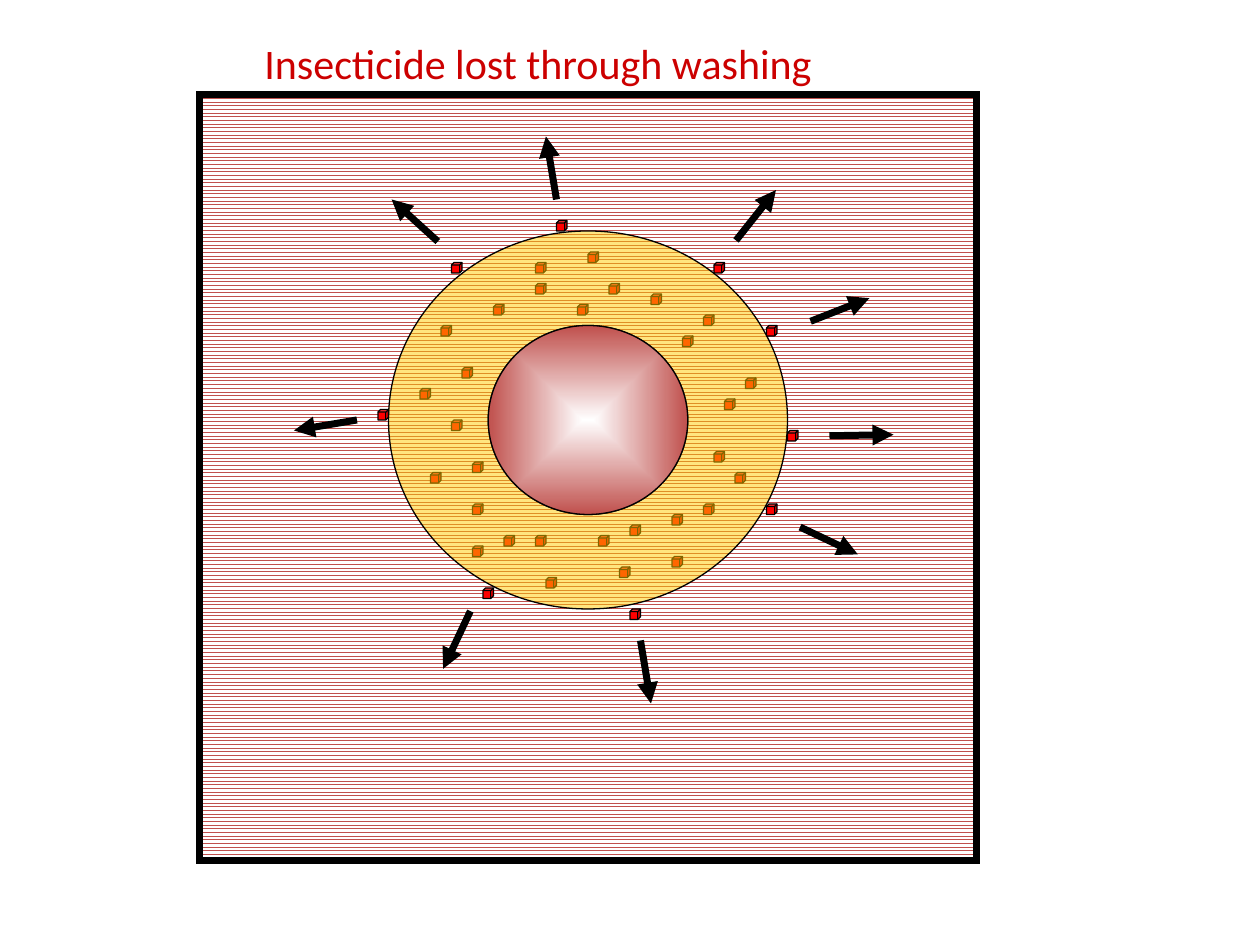
import lxml.etree
import pptx
import pptx.dml.color
import pptx.enum.dml
import pptx.enum.shapes
import pptx.oxml.ns
import pptx.util

KIND = pptx.enum.shapes.MSO_SHAPE
qn = pptx.oxml.ns.qn
add = lxml.etree.SubElement
HEX = {"ink": "000000", "red": "FF0000", "brick": "C0504D",
       "gold": "FFCC00", "title": "CC0000", "white": "FFFFFF"}
RGB = {name: pptx.dml.color.RGBColor.from_string(code) for name, code in HEX.items()}


def cell(*nums):
    """Turn grid cells of a twelfth of an inch into lengths."""
    return [pptx.util.Emu(round(num * 76200)) for num in nums]


def trim(shape, fill=None, width=0.75):
    """Set a shape's solid fill and black outline, without shadow."""
    shape.shadow.inherit = False
    if fill:
        shape.fill.solid()
        shape.fill.fore_color.rgb = RGB[fill]
    else:
        shape.fill.background()
    shape.line.color.rgb = RGB["ink"]
    shape.line.width = pptx.util.Pt(width)


deck = pptx.Presentation()
deck.slide_width, deck.slide_height = cell(120, 90)
slide = deck.slides.add_slide(deck.slide_layouts[6])
shapes = slide.shapes

# Water behind the fibre, then its frame with sharp corners
area = cell(19, 9, 74, 73)
water = shapes.add_shape(KIND.RECTANGLE, *area)
water.shadow.inherit = False
water.fill.patterned()
water.fill.pattern = pptx.enum.dml.MSO_PATTERN.ZIG_ZAG
water.fill.fore_color.rgb = RGB["brick"]
water.fill.back_color.rgb = RGB["white"]
water.line.fill.background()
border = shapes.add_shape(KIND.RECTANGLE, *area)
trim(border, width=4)
add(border._element.spPr.find(qn("a:ln")), qn("a:miter"), lim="800000")

# Insecticide grains: held in the coat, and lost at its surface
held = [(68, 43), (65, 32), (71, 36), (64, 49), (62, 28), (44, 35), (67, 30), (59, 54),
        (51, 51), (45, 48), (47, 29), (58, 27), (52, 55), (60, 50), (43, 40), (51, 27),
        (41, 45), (42, 31), (67, 48), (64, 53), (45, 52), (56, 24), (69, 38), (70, 45),
        (57, 51), (40, 37), (51, 25), (55, 29), (45, 44), (48, 51)]
lost = [(73, 48), (75, 41), (68, 25), (73, 31), (60, 58), (53, 21), (46, 56), (36, 39),
        (43, 25)]
fibre = shapes.add_group_shape().shapes
loose = shapes.add_group_shape().shapes
for group, spots in ((fibre, held), (loose, lost)):
    for x, y in spots:
        trim(group.add_shape(KIND.CUBE, *cell(x, y, 1, 1)), "red")

# Coat: a ring whose hole is half its size and runs the other way round
mid_x, mid_y, wide, high = 56, 40, 19, 18
loops = []
for share, turn in ((1, -1), (0.5, 1)):
    dx, dy = share * wide, share * high * turn
    loops.append([cell(mid_x + sx * dx, mid_y + sy * dy)
                  for sx, sy in ((-1, 0), (0, 1), (1, 0), (0, -1), (-1, 0))])
outer, inner = loops
pen = fibre.build_freeform(*outer[0])
pen.add_line_segments(outer[1:], close=True)
pen.move_to(*inner[0])
pen.add_line_segments(inner[1:], close=True)
coat = pen.convert_to_shape()
trim(coat, "gold")
tint = coat._element.spPr.find(qn("a:solidFill"))[0]
add(tint, qn("a:alpha"), val="50000")

# Bend each side of the two loops into a quarter of an ellipse
bend = 0.5523
hub = cell(wide, high)
for step in list(coat._element.iter(qn("a:moveTo"), qn("a:lnTo"))):
    end = [int(step[0].get(axis)) for axis in "xy"]
    if step.tag == qn("a:lnTo"):
        first = [s + bend * (e - h) for s, e, h in zip(start, end, hub)]
        second = [e + bend * (s - h) for s, e, h in zip(start, end, hub)]
        curve = lxml.etree.Element(qn("a:cubicBezTo"))
        for x, y in (first, second, end):
            add(curve, qn("a:pt"), x=str(round(x)), y=str(round(y)))
        step.getparent().replace(step, curve)
    start = end

# Core with a gradient from its centre
core = fibre.add_shape(KIND.OVAL, *cell(mid_x - wide / 2, mid_y - high / 2, wide, high))
trim(core)
core.fill.gradient()
for stop, place, name in zip(core.fill.gradient_stops, (0, 1), ("white", "brick")):
    stop.position = place
    stop.color.rgb = RGB[name]
grad = core._element.spPr.find(qn("a:gradFill"))
grad.remove(grad.find(qn("a:lin")))
focus = add(grad, qn("a:path"), {"path": "shape"})
add(focus, qn("a:fillToRect"), dict.fromkeys("ltrb", "50000"))

# Arrows away from the fibre
arrows = [(61, 61, 62, 67), (76.2, 50.2, 81.7, 52.8), (44.8, 58.2, 42.2, 63.7),
          (34, 40, 28, 41), (41.7, 23, 37.3, 19), (53, 19, 52, 13),
          (70.1, 22.9, 73.9, 18.1), (77.2, 30.6, 82.8, 28.4), (79, 41.5, 85.1, 41.4)]
away = shapes.add_group_shape().shapes
for ends in arrows:
    arrow = away.add_connector(pptx.enum.shapes.MSO_CONNECTOR.STRAIGHT, *cell(*ends))
    arrow.line.color.rgb = RGB["ink"]
    arrow.line.width = pptx.util.Pt(4)
    props = arrow._element.spPr
    add(props.find(qn("a:ln")), qn("a:tailEnd"), type="triangle")
    add(props, qn("a:effectLst"))

# Title
frame = shapes.add_textbox(*cell(24, 3, 71, 6)).text_frame
frame.word_wrap = True
run = frame.paragraphs[0].add_run()
run.text = "Insecticide lost through washing"
for key, value in {"name": "Calibri", "size": pptx.util.Pt(24)}.items():
    setattr(run.font, key, value)
run.font.color.rgb = RGB["title"]

deck.save("out.pptx")
